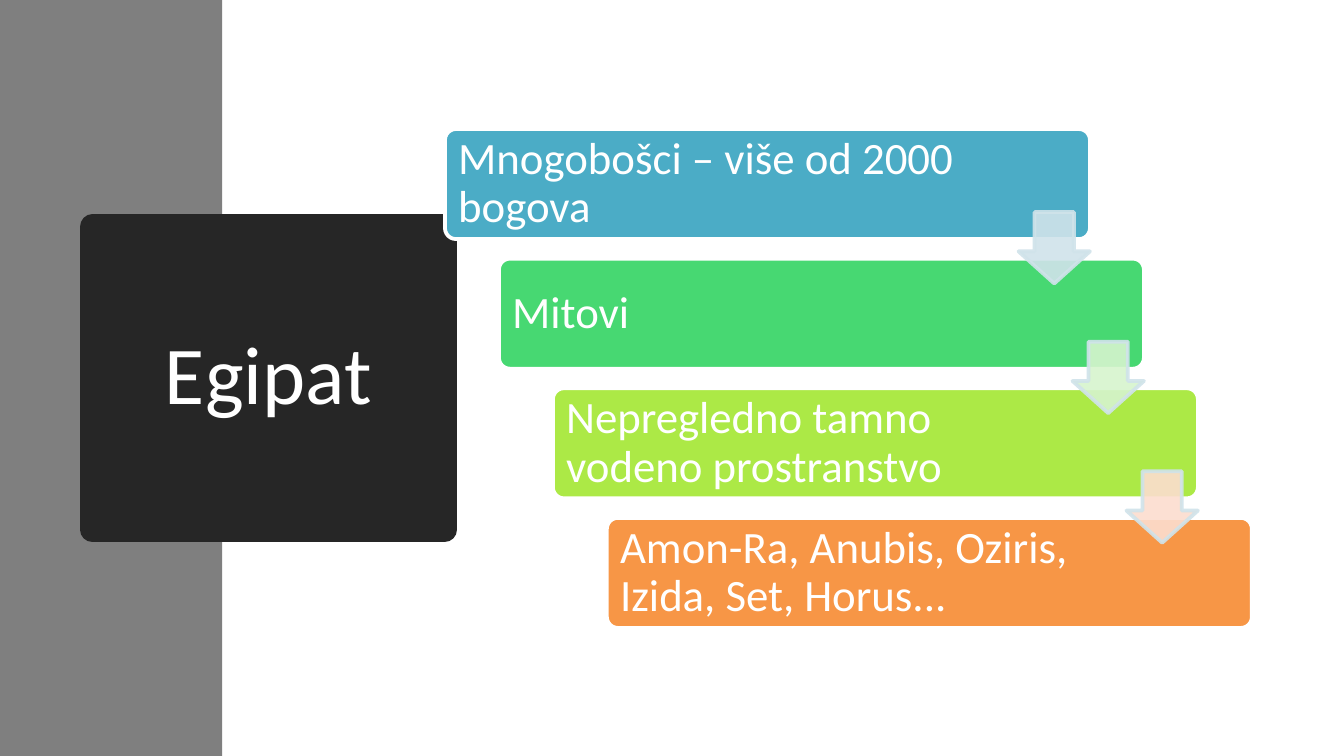
from dataclasses import dataclass

from lxml import etree
from pptx import Presentation
from pptx import util as u
from pptx.dml.color import RGBColor
from pptx.enum import shapes, text
from pptx.oxml import ns

COLOURS = {
    "band": "7F7F7F", "title": "262626", "white": "FFFFFF",
    "blue": "4BACC6", "green": "47D872", "lime": "ACE946", "orange": "F79646",
    "pale_blue": "D0E3EA", "pale_green": "D6F4CE", "pale_orange": "FCDDCF",
}
SLIDE_WIDTH, SLIDE_HEIGHT = 25.4, 14.29

# Staircase geometry in centimetres
FIRST_LEFT, FIRST_TOP = 8.41, 2.44
STEP_X, STEP_Y = 1.02, 2.45
CARD_WIDTH, CARD_HEIGHT = 12.19, 2.08
ARROW_SIZE, ARROW_DROP = 1.35, 1.57


@dataclass
class Step:
    label: str
    fill: str
    label_width: float = 9.83
    arrow_fill: str = ""


STEPS = [
    Step("Mnogobošci – više od 2000 bogova", "blue", 9.91, "pale_blue"),
    Step("Mitovi", "green", arrow_fill="pale_green"),
    Step("Nepregledno tamno vodeno prostranstvo", "lime", arrow_fill="pale_orange"),
    Step("Amon-Ra, Anubis, Oziris, Izida, Set, Horus...", "orange"),
]


def colour(name: str) -> RGBColor:
    return RGBColor.from_string(COLOURS[name])


def paint(shape, fill: str, line: str = "", width: float = 2) -> None:
    shape.fill.solid()
    shape.fill.fore_color.rgb = colour(fill)
    if line:
        shape.line.color.rgb = colour(line)
        shape.line.width = u.Pt(width)
    else:
        shape.line.fill.background()


def add_block(slide, kind, box: tuple, fill: str, line: str = "", adjustments: tuple = ()):
    shape = slide.shapes.add_shape(kind, *map(u.Cm, box))
    shape.shadow.inherit = False
    for index, value in enumerate(adjustments):
        shape.adjustments[index] = value
    paint(shape, fill, line)
    return shape


def write(shape, words: str, size: float, alignment, spacing: float, margin: float) -> None:
    frame = shape.text_frame
    frame_format = {
        "text": words, "word_wrap": True, "auto_size": text.MSO_AUTO_SIZE.NONE,
        "vertical_anchor": text.MSO_ANCHOR.MIDDLE,
    }
    for side in ("left", "top", "right", "bottom"):
        frame_format[f"margin_{side}"] = u.Cm(margin)
    for name, value in frame_format.items():
        setattr(frame, name, value)
    paragraph = frame.paragraphs[0]
    paragraph.alignment = alignment
    paragraph.line_spacing = spacing
    font = paragraph.runs[0].font
    for name, value in {"name": "Calibri", "size": u.Pt(size)}.items():
        setattr(font, name, value)
    font.color.rgb = colour("white")


def add_card(slide, index: int, step: Step) -> None:
    left, top = FIRST_LEFT + index * STEP_X, FIRST_TOP + index * STEP_Y
    add_block(slide, shapes.MSO_SHAPE.ROUNDED_RECTANGLE,
              (left, top, CARD_WIDTH, CARD_HEIGHT), step.fill, "white", (0.1,))
    label = slide.shapes.add_textbox(*map(u.Cm, (left, top, step.label_width, CARD_HEIGHT)))
    write(label, step.label, 24, text.PP_ALIGN.LEFT, 0.9, 0.25)


def add_arrow(slide, index: int, step: Step) -> None:
    left = FIRST_LEFT + index * STEP_X + CARD_WIDTH - ARROW_SIZE
    top = FIRST_TOP + index * STEP_Y + ARROW_DROP
    arrow = add_block(slide, shapes.MSO_SHAPE.DOWN_ARROW, (left, top, ARROW_SIZE, ARROW_SIZE),
                      step.arrow_fill, "pale_blue", (0.55, 0.45))
    # Slight transparency on fill and outline
    for element in arrow._element.spPr.iter(ns.qn("a:srgbClr")):
        etree.SubElement(element, ns.qn("a:alpha"), val="90000")


def add_title(slide, words: str) -> None:
    title = slide.shapes.title
    box = {"left": 1.75, "top": 4.29, "width": 6.65, "height": 5.72}
    for name, value in box.items():
        setattr(title, name, u.Cm(value))
    paint(title, "title", "title", 13.75)
    # Round joins soften the corners of the thick outline
    etree.SubElement(title.line._get_or_add_ln(), ns.qn("a:round"))
    write(title, words, 44, text.PP_ALIGN.CENTER, 0.9, 0.25)


def main() -> None:
    presentation = Presentation()
    presentation.slide_width = u.Cm(SLIDE_WIDTH)
    presentation.slide_height = u.Cm(SLIDE_HEIGHT)
    slide = presentation.slides.add_slide(presentation.slide_layouts[5])

    # Side band, sent behind the title
    band = add_block(slide, shapes.MSO_SHAPE.RECTANGLE, (0, 0, 4.2, SLIDE_HEIGHT), "band")
    slide.shapes.title._element.addprevious(band._element)
    add_title(slide, "Egipat")

    # Staircase of cards, then the arrows on top
    for index, step in enumerate(STEPS):
        add_card(slide, index, step)
    for index, step in enumerate(STEPS):
        if step.arrow_fill:
            add_arrow(slide, index, step)

    presentation.save("out.pptx")


if __name__ == "__main__":
    main()
